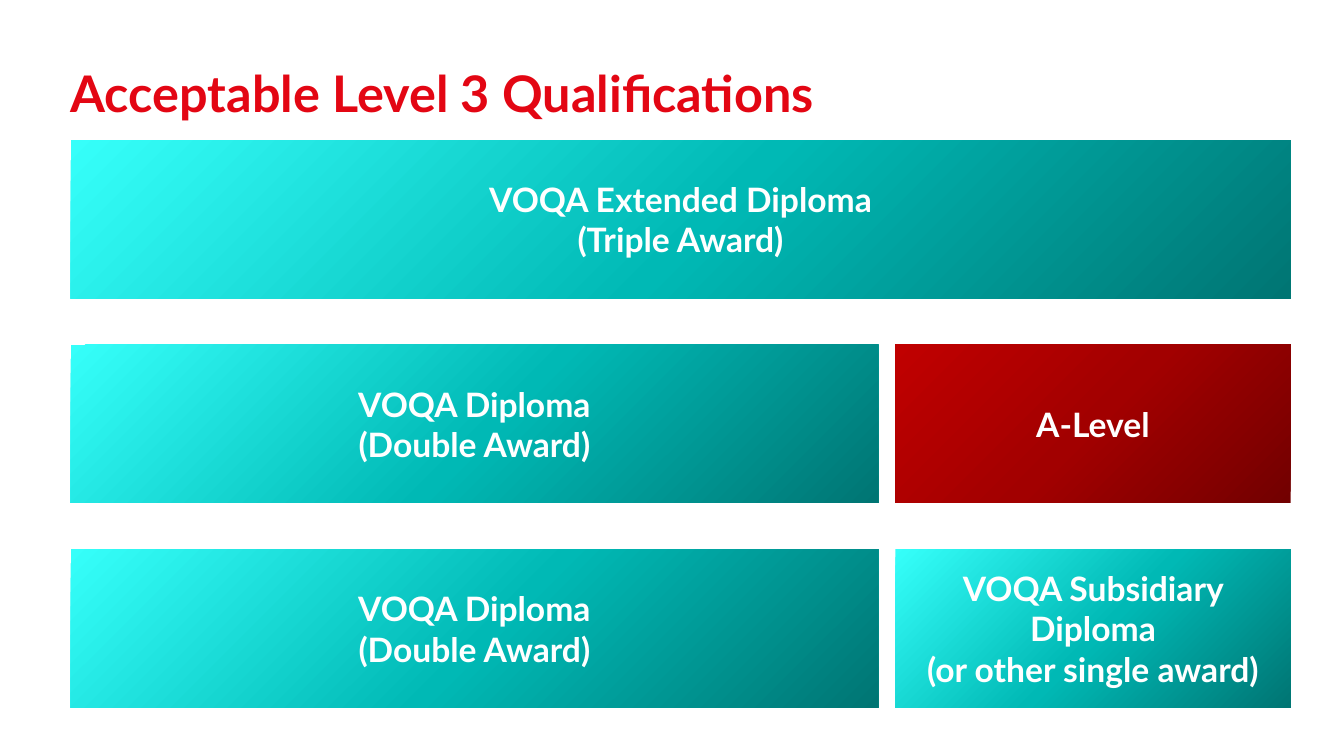
from lxml import etree
from pptx import Presentation
from pptx.dml.color import RGBColor
from pptx.enum.shapes import MSO_SHAPE
from pptx.enum.text import MSO_ANCHOR, MSO_AUTO_SIZE, PP_ALIGN
from pptx.oxml.ns import qn
from pptx.util import Inches, Pt

RECTANGLE = MSO_SHAPE.RECTANGLE
TOP, MIDDLE = MSO_ANCHOR.TOP, MSO_ANCHOR.MIDDLE
LEFT, CENTER = PP_ALIGN.LEFT, PP_ALIGN.CENTER
NO_AUTOFIT = MSO_AUTO_SIZE.NONE

FONT = "Lato"
COLORS = {
    "title": "E30613", "label": "FFFFFF",
    "teal_dark": "007573", "teal": "00B9B5", "teal_light": "36FFFA",
    "red_dark": "720000", "red": "A20000", "red_light": "C00000",
}
TEAL = [(0, "teal_dark"), (48, "teal"), (100, "teal_light")]
RED = [(0, "red_dark"), (50, "red"), (100, "red_light")]

TITLE_BOX = (0.6, 0.63, 12.16, 1.09)
GRID_BOX = (0.7, 1.39, 12.1, 5.63)
COLUMNS, ROWS = 3, 3
COLUMN_GAP, ROW_GAP = 0.17, 0.46

DOUBLE_AWARD = "VOQA Diploma\n(Double Award)"
QUALIFICATIONS = [
    (0, 0, 3, "VOQA Extended Diploma\n(Triple Award)", TEAL, True),
    (1, 0, 2, DOUBLE_AWARD, TEAL, True),
    (1, 2, 1, "A-Level", RED, False),
    (2, 0, 2, DOUBLE_AWARD, TEAL, True),
    (2, 2, 1, "VOQA Subsidiary Diploma\v(or other single award)", TEAL, True),
]


def format_paragraph(paragraph, size, color, alignment):
    """Set the bold face, size, colour and alignment of a paragraph."""
    paragraph.alignment = alignment
    font = paragraph.font
    font.name, font.size, font.bold = FONT, Pt(size), True
    font.color.rgb = RGBColor.from_string(COLORS[color])


def add_gradient(shape, stops, radial):
    """Fill a shape with a gradient that starts at its bottom right corner."""
    gradient = etree.SubElement(shape.element.spPr, qn("a:gradFill"), rotWithShape="1")
    stop_list = etree.SubElement(gradient, qn("a:gsLst"))
    for position, color in stops:
        stop = etree.SubElement(stop_list, qn("a:gs"), pos=str(position * 1000))
        etree.SubElement(stop, qn("a:srgbClr"), val=COLORS[color])
    if radial:
        circle = etree.SubElement(gradient, qn("a:path"), path="circle")
        etree.SubElement(circle, qn("a:fillToRect"), l="100000", t="100000")
    else:
        etree.SubElement(gradient, qn("a:lin"), ang=str(225 * 60000), scaled="1")


def add_title(slide, box, text):
    """Place the slide title in the given box."""
    title = slide.shapes.title
    title.left, title.top, title.width, title.height = map(Inches, box)
    frame = title.text_frame
    frame.text = text
    frame.word_wrap, frame.auto_size = True, NO_AUTOFIT
    frame.vertical_anchor = TOP
    paragraph = frame.paragraphs[0]
    paragraph.line_spacing, paragraph.space_before = 0.9, Pt(0)
    format_paragraph(paragraph, 36, "title", LEFT)


def add_block(slide, box, text, stops, radial):
    """Add one labelled gradient block in the given box."""
    block = slide.shapes.add_shape(RECTANGLE, *map(Inches, box))
    add_gradient(block, stops, radial)
    block.line.fill.background()
    block.shadow.inherit = False
    frame = block.text_frame
    frame.text = text
    frame.word_wrap, frame.vertical_anchor = True, MIDDLE
    for paragraph in frame.paragraphs:
        format_paragraph(paragraph, 24, "label", CENTER)


def add_qualification_grid(slide, box):
    """Lay the qualification blocks out on a grid inside the given box."""
    left, top, width, height = box
    column_step = (width + COLUMN_GAP) / COLUMNS
    row_step = (height + ROW_GAP) / ROWS
    for row, column, span, text, stops, radial in QUALIFICATIONS:
        block_box = (left + column * column_step, top + row * row_step,
                     span * column_step - COLUMN_GAP, row_step - ROW_GAP)
        add_block(slide, block_box, text, stops, radial)


def main():
    """Build the slide and save it."""
    presentation = Presentation()
    presentation.slide_width, presentation.slide_height = Inches(13.33), Inches(7.5)
    slide = presentation.slides.add_slide(presentation.slide_layouts[5])
    add_title(slide, TITLE_BOX, "Acceptable Level 3 Qualifications")
    add_qualification_grid(slide, GRID_BOX)
    presentation.save("out.pptx")


if __name__ == "__main__":
    main()
